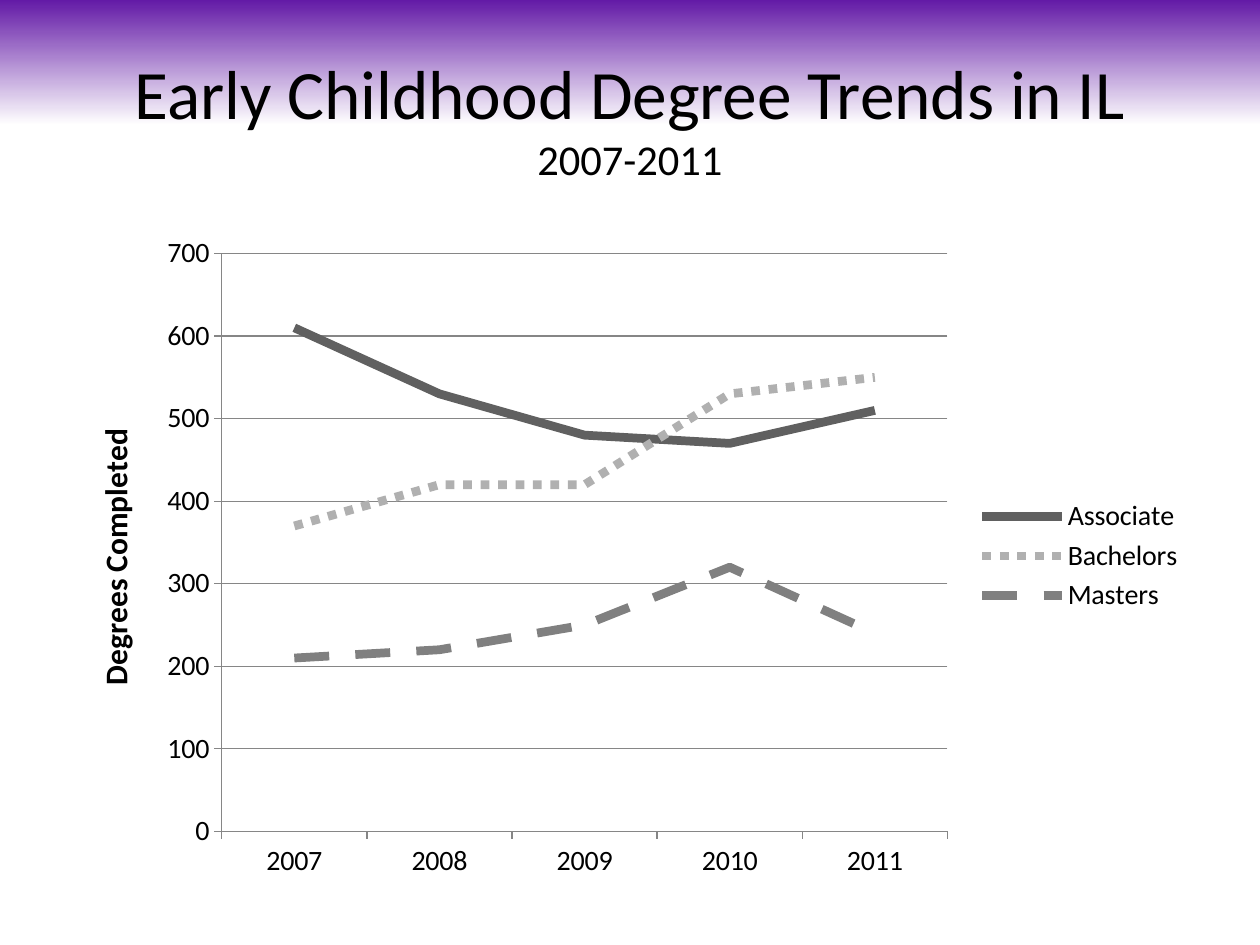
from pptx import Presentation
from pptx.chart.data import CategoryChartData
from pptx.dml.color import RGBColor
from pptx.enum.chart import XL_CHART_TYPE as ChartType, XL_LEGEND_POSITION as LegendPosition
from pptx.enum.chart import XL_MARKER_STYLE as Marker, XL_TICK_MARK as Tick
from pptx.enum.dml import MSO_LINE as Dash
from pptx.enum.shapes import MSO_SHAPE as Shape
from pptx.enum.text import MSO_ANCHOR as Anchor, MSO_AUTO_SIZE as AutoSize, PP_ALIGN as Align
from pptx.oxml import parse_xml
from pptx.oxml.ns import nsdecls
from pptx.util import Emu, Pt

SCALE = 914400 / 126
FONT = "Calibri"
BLACK = RGBColor(0x00, 0x00, 0x00)
WHITE = RGBColor(0xFF, 0xFF, 0xFF)
PURPLE = RGBColor(0x63, 0x1A, 0xA6)
GRID_GRAY = RGBColor(0x86, 0x86, 0x86)
DARK_GRAY = RGBColor(0x60, 0x60, 0x60)
LIGHT_GRAY = RGBColor(0xB0, 0xB0, 0xB0)
MID_GRAY = RGBColor(0x80, 0x80, 0x80)

YEARS = ["2007", "2008", "2009", "2010", "2011"]
DEGREES = [
    ("Associate", [610, 530, 480, 470, 510], DARK_GRAY, Dash.SOLID),
    ("Bachelors", [370, 420, 420, 530, 550], LIGHT_GRAY, Dash.ROUND_DOT),
    ("Masters", [210, 220, 250, 320, 240], MID_GRAY, Dash.DASH),
]


def px(length):
    return Emu(round(length * SCALE))


def style_font(font, size, bold=False):
    font.name = FONT
    font.size = Pt(size)
    font.bold = bold
    font.color.rgb = BLACK


def style_line(line, color, width):
    line.color.rgb = color
    line.width = Pt(width)


def add_band(page, box):
    band = page.shapes.add_shape(Shape.RECTANGLE, *map(px, box))
    band.shadow.inherit = False
    band.line.fill.background()
    band.fill.gradient()
    band.fill.gradient_angle = 270
    for stop, color in zip(band.fill.gradient_stops, (PURPLE, WHITE)):
        stop.color.rgb = color
    page.shapes._spTree.insert(2, band._element)


def add_title(page, box, lines):
    title = page.shapes.title
    title.left, title.top, title.width, title.height = map(px, box)
    frame = title.text_frame
    frame.word_wrap = True
    frame.auto_size = AutoSize.NONE
    frame.vertical_anchor = Anchor.MIDDLE
    para = frame.paragraphs[0]
    para.alignment = Align.CENTER
    for index, (text, size) in enumerate(lines):
        if index:
            para.add_line_break()
        span = para.add_run()
        span.text = text
        style_font(span.font, size)


def set_plot_layout(chart, left, top, width, height):
    plot_area = chart._chartSpace.chart.plotArea
    for old in plot_area.findall("{*}layout"):
        plot_area.remove(old)
    plot_area.insert(0, parse_xml(
        f'<c:layout {nsdecls("c")}><c:manualLayout><c:layoutTarget val="inner"/>'
        '<c:xMode val="edge"/><c:yMode val="edge"/>'
        f'<c:x val="{left}"/><c:y val="{top}"/><c:w val="{width}"/><c:h val="{height}"/>'
        '</c:manualLayout></c:layout>'))


def add_degree_chart(page, box):
    data = CategoryChartData()
    data.categories = YEARS
    for name, values, _, _ in DEGREES:
        data.add_series(name, values)
    chart = page.shapes.add_chart(ChartType.LINE, *map(px, box), data).chart
    style_font(chart.font, 18)
    chart.has_title = False
    chart.plots[0].vary_by_categories = False
    set_plot_layout(chart, 0.14, 0.05, 0.64, 0.86)

    for series, (_, _, color, dash) in zip(chart.plots[0].series, DEGREES):
        series.smooth = False
        series.marker.style = Marker.NONE
        style_line(series.format.line, color, 5)
        series.format.line.dash_style = dash

    for axis in (chart.category_axis, chart.value_axis):
        axis.major_tick_mark = Tick.OUTSIDE
        axis.minor_tick_mark = Tick.NONE
        style_font(axis.tick_labels.font, 16)
        style_line(axis.format.line, GRID_GRAY, 0.75)

    value_axis = chart.value_axis
    value_axis.minimum_scale, value_axis.maximum_scale = 0, 700
    value_axis.major_unit = 100
    value_axis.has_major_gridlines = True
    style_line(value_axis.major_gridlines.format.line, GRID_GRAY, 0.75)
    span = value_axis.axis_title.text_frame.paragraphs[0].add_run()
    span.text = "Degrees Completed"
    style_font(span.font, 18, bold=True)

    chart.has_legend = True
    chart.legend.position = LegendPosition.RIGHT
    chart.legend.include_in_layout = False
    style_font(chart.legend.font, 16)


def main():
    deck = Presentation()
    deck.slide_width, deck.slide_height = px(1260), px(945)
    page = deck.slides.add_slide(deck.slide_layouts[5])
    add_band(page, (0, 0, 1260, 125))
    add_title(page, (63, 38, 1134, 158),
              [("Early Childhood Degree Trends in IL", 39.6), ("2007-2011", 24.3)])
    add_degree_chart(page, (63, 220, 1134, 672))
    deck.save("out.pptx")


if __name__ == "__main__":
    main()
